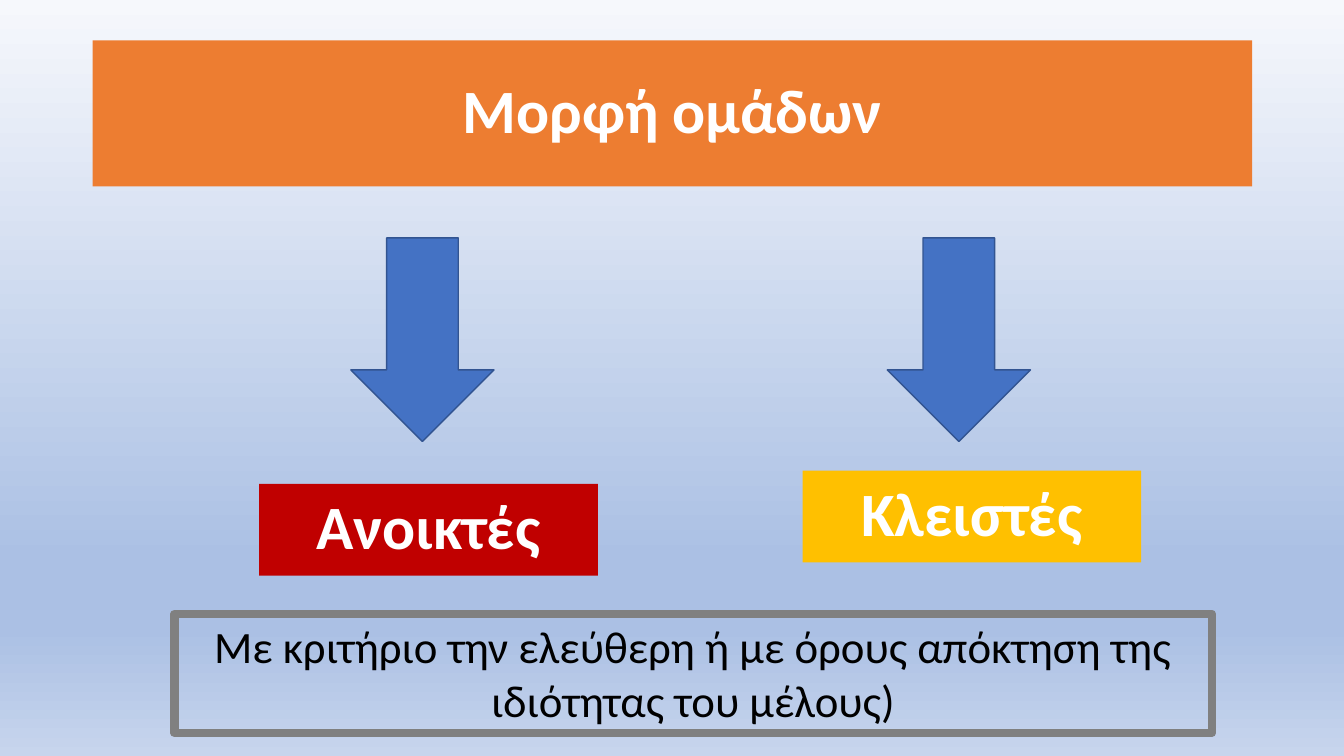
"""Build a slide on open and closed forms of groups."""
from dataclasses import dataclass
from typing import Optional

from lxml import etree
from pptx import Presentation, util as u
from pptx.dml.color import RGBColor
from pptx.enum import shapes as s, text as t
from pptx.oxml import ns

WHITE = RGBColor(0xFF, 0xFF, 0xFF)
BLACK = RGBColor(0, 0, 0)
ORANGE = RGBColor(0xED, 0x7D, 0x31)
BLUE = RGBColor(0x44, 0x72, 0xC4)
NAVY = RGBColor(0x32, 0x54, 0x91)
RED = RGBColor(0xC0, 0, 0)
GOLD = RGBColor(0xFF, 0xC0, 0)
GREY = RGBColor(0x80, 0x80, 0x80)
PALE = RGBColor(0xF6, 0xF8, 0xFC)
MIST = RGBColor(0xAB, 0xC0, 0xE4)
HAZE = RGBColor(0xC7, 0xD5, 0xED)
STOPS = ((0, PALE), (74, MIST), (83, MIST), (100, HAZE))

HEAD = {"name": "Calibri", "size": u.Pt(44), "bold": True}
BODY = {"name": "Calibri", "size": u.Pt(32), "bold": False}


@dataclass
class Box:
    """A filled or outlined shape with optional text."""
    left: float
    top: float
    width: float
    height: float
    fill: Optional[RGBColor] = None
    line: Optional[RGBColor] = None
    weight: float = 1
    words: str = ""
    font: Optional[dict] = None
    ink: RGBColor = WHITE
    space: float = 0.9
    anchor: t.MSO_ANCHOR = t.MSO_ANCHOR.MIDDLE
    kind: s.MSO_SHAPE = s.MSO_SHAPE.RECTANGLE


def arrow(left: float) -> Box:
    """Describe a down arrow at the given left edge."""
    return Box(left, 2.36, 1.42, 2.02, BLUE, NAVY, kind=s.MSO_SHAPE.DOWN_ARROW)


def label(left: float, top: float, fill: RGBColor, words: str) -> Box:
    """Describe a coloured label for one form of group."""
    return Box(left, top, 3.36, 0.91, fill, words=words, font=HEAD)


BOXES = (
    Box(0.92, 0.4, 11.5, 1.45, ORANGE, words="Μορφή ομάδων", font=HEAD),
    arrow(8.8),
    arrow(3.48),
    label(2.57, 4.8, RED, "Ανοικτές"),
    label(7.96, 4.67, GOLD, "Κλειστές"),
    Box(1.73, 6.09, 10.29, 1.18, line=GREY, weight=6, font=BODY, ink=BLACK,
        words="Με κριτήριο την ελεύθερη ή με όρους απόκτηση της ιδιότητας του μέλους)",
        space=1.0, anchor=t.MSO_ANCHOR.TOP),
)


def paint(slide) -> None:
    """Fill the background with a vertical gradient."""
    fill = slide.background.fill
    fill.gradient()
    fill.gradient_angle = 270
    stops = next(slide.element.iter(ns.qn("a:gsLst")))
    for stop in list(stops):
        stops.remove(stop)
    for place, tone in STOPS:
        stop = etree.SubElement(stops, ns.qn("a:gs"), pos=str(place * 1000))
        etree.SubElement(stop, ns.qn("a:srgbClr"), val=str(tone))


def write(shape, box: Box) -> None:
    """Put the centred text of a box into its shape."""
    frame = shape.text_frame
    frame.word_wrap = True
    frame.vertical_anchor = box.anchor
    para = frame.paragraphs[0]
    para.alignment = t.PP_ALIGN.CENTER
    para.line_spacing = box.space
    run = para.add_run()
    run.text = box.words
    for key, value in box.font.items():
        setattr(run.font, key, value)
    run.font.color.rgb = box.ink


def draw(slide, box: Box) -> None:
    """Draw one box on the slide."""
    area = map(u.Inches, (box.left, box.top, box.width, box.height))
    shape = slide.shapes.add_shape(box.kind, *area)
    shape.shadow.inherit = False
    for fill, tone in ((shape.fill, box.fill), (shape.line.fill, box.line)):
        if tone is None:
            fill.background()
        else:
            fill.solid()
            fill.fore_color.rgb = tone
    if box.line is not None:
        shape.line.width = u.Pt(box.weight)
    if box.words:
        write(shape, box)


def main() -> None:
    """Build the slide and save it."""
    deck = Presentation()
    deck.slide_width, deck.slide_height = u.Inches(13.33), u.Inches(7.5)
    slide = deck.slides.add_slide(deck.slide_layouts[6])
    paint(slide)
    for box in BOXES:
        draw(slide, box)
    deck.save("out.pptx")


if __name__ == "__main__":
    main()
